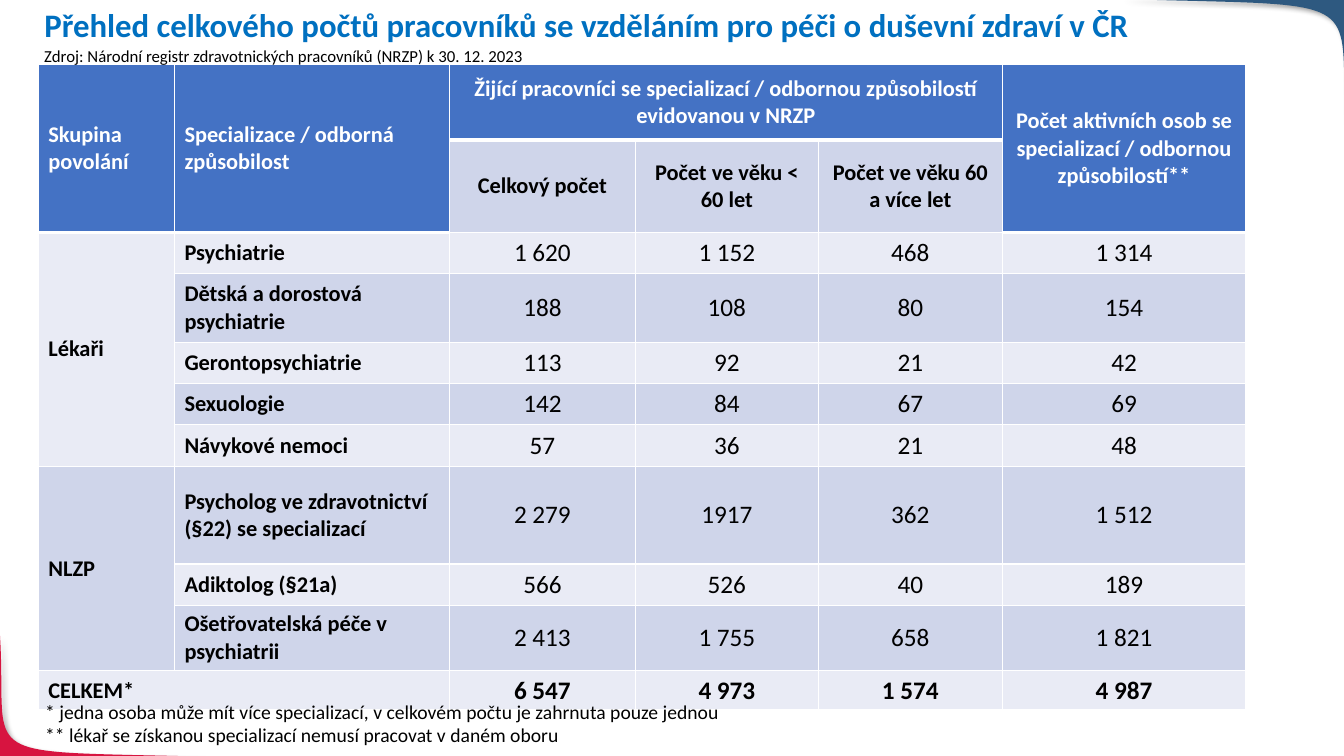
from dataclasses import dataclass

from lxml.etree import SubElement
from pptx import Presentation
from pptx.dml.color import RGBColor
from pptx.enum.text import MSO_ANCHOR, MSO_AUTO_SIZE, PP_ALIGN
from pptx.oxml.ns import qn
from pptx.util import Inches, Pt


@dataclass(frozen=True)
class Theme:
    font: str = "Calibri"
    title: str = "0070C0"
    text: str = "000000"
    white: str = "FFFFFF"
    header: str = "4472C4"
    light: str = "E9EBF5"
    dark: str = "CFD5EA"
    red: str = "D71440"
    blue: str = "2E5980"
    title_size: float = 23.4
    label_size: int = 16
    number_size: int = 18
    note_size: int = 14
    source_size: int = 12


T = Theme()
WIDTH, HEIGHT = 13.33, 7.5

TITLE = "Přehled celkového počtů pracovníků se vzděláním pro péči o duševní zdraví v ČR"
SOURCE = ["Zdroj: Národní registr zdravotnických pracovníků (NRZP) k 30. 12. 2023"]
NOTES = [
    "* jedna osoba může mít více specializací, v celkovém počtu je zahrnuta pouze jednou",
    "** lékař se získanou specializací nemusí pracovat v daném oboru",
]
ROWS = [
    ("Skupina povolání", "Specializace / odborná způsobilost",
     "Žijící pracovníci se specializací / odbornou způsobilostí evidovanou v NRZP", "", "",
     "Počet aktivních osob se specializací / odbornou způsobilostí**"),
    ("", "", "Celkový počet", "Počet ve věku < 60 let", "Počet ve věku 60 a více let", ""),
    ("Lékaři", "Psychiatrie", "1 620", "1 152", "468", "1 314"),
    ("", "Dětská a dorostová psychiatrie", "188", "108", "80", "154"),
    ("", "Gerontopsychiatrie", "113", "92", "21", "42"),
    ("", "Sexuologie", "142", "84", "67", "69"),
    ("", "Návykové nemoci", "57", "36", "21", "48"),
    ("NLZP", "Psycholog ve zdravotnictví (§22) se specializací", "2 279", "1917", "362", "1 512"),
    ("", "Adiktolog (§21a)", "566", "526", "40", "189"),
    ("", "Ošetřovatelská péče v psychiatrii", "2 413", "1 755", "658", "1 821"),
    ("CELKEM*", "", "6 547", "4 973", "1 574", "4 987"),
]
COLUMN_WIDTHS = [1.35, 2.73, 1.84, 1.82, 1.82, 2.42]
ROW_HEIGHTS = [0.75, 0.91, 0.41, 0.68, 0.41, 0.41, 0.41, 0.97, 0.41, 0.65, 0.39]
# first row, first column, last row, last column
MERGES = [(0, 0, 1, 0), (0, 1, 1, 1), (0, 2, 0, 4), (0, 5, 1, 5),
          (2, 0, 6, 0), (7, 0, 9, 0), (10, 0, 10, 1)]
FIRST_NUMBER_ROW, FIRST_NUMBER_COLUMN, TOTAL_ROW = 2, 2, len(ROWS) - 1

# four Bézier points of the curved edge, then the slide corner it encloses
CORNERS = [
    (T.red, [(2.13, 7.51), (-0.34, 7.44), (0.08, 7.59), (0, 6.3)], (-0.01, 7.51)),
    (T.blue, [(11.11, -0.01), (13.7, 0.07), (13.26, -0.1), (13.35, 1.42)], (13.35, -0.01)),
]


def rgb(value):
    return RGBColor.from_string(value)


def style(p, size, color, bold=False, align=PP_ALIGN.LEFT):
    p.alignment = align
    p.font.name, p.font.size, p.font.bold = T.font, Pt(size), bold
    p.font.color.rgb = rgb(color)


def bezier(points, steps=40):
    """Points along a cubic Bézier curve, in EMU."""
    for i in range(steps + 1):
        t = i / steps
        weights = ((1 - t) ** 3, 3 * t * (1 - t) ** 2, 3 * t * t * (1 - t), t ** 3)
        yield tuple(Inches(sum(w * p[axis] for w, p in zip(weights, points)))
                    for axis in (0, 1))


def add_corner(s, color, curve, corner):
    start, *rest = bezier(curve)
    builder = s.shapes.build_freeform(*start)
    builder.add_line_segments(rest + [tuple(map(Inches, corner))], close=True)
    sp = builder.convert_to_shape()
    sp.fill.solid()
    sp.fill.fore_color.rgb = rgb(color)
    sp.line.fill.background()
    effects = SubElement(sp.element.spPr, qn("a:effectLst"))
    shadow = SubElement(effects, qn("a:outerShdw"), blurRad=str(Pt(4)), dist=str(Pt(3)),
                        dir=str(45 * 60000), algn="tl", rotWithShape="0")
    black = SubElement(shadow, qn("a:srgbClr"), val=T.text)
    SubElement(black, qn("a:alpha"), val="40000")


def add_text(s, lines, box, size):
    tf = s.shapes.add_textbox(*map(Inches, box)).text_frame
    tf.word_wrap = True
    tf.text = "\n".join(lines)
    for p in tf.paragraphs:
        style(p, size, T.text)


def is_header(row, col):
    return row == 0 or (row == 1 and col in (0, 1, 5))


def add_borders(cell, row, col):
    """White cell lines, thick below every blue header cell."""
    top = 3 if row > 0 and is_header(row - 1, col) else 1
    bottom = 3 if is_header(row, col) else 1
    tcPr = cell._tc.get_or_add_tcPr()
    for side, width in (("L", 1), ("R", 1), ("T", top), ("B", bottom)):
        ln = SubElement(tcPr, qn(f"a:ln{side}"), w=str(Pt(width)))
        fill = SubElement(ln, qn("a:solidFill"))
        SubElement(fill, qn("a:srgbClr"), val=T.white)


def format_cell(cell, row, col, text):
    header = is_header(row, col)
    add_borders(cell, row, col)
    cell.fill.solid()
    cell.fill.fore_color.rgb = rgb(T.header if header else T.dark if row % 2 else T.light)
    cell.vertical_anchor = MSO_ANCHOR.MIDDLE
    centred = col >= FIRST_NUMBER_COLUMN
    number = centred and row >= FIRST_NUMBER_ROW
    if number and row == TOTAL_ROW:
        cell.margin_left = cell.margin_right = cell.margin_top = Inches(0.01)
        cell.margin_bottom = 0
    if text:
        cell.text = text
    style(cell.text_frame.paragraphs[0], T.number_size if number else T.label_size,
          T.white if header else T.text, not number or row == TOTAL_ROW,
          PP_ALIGN.CENTER if centred else PP_ALIGN.LEFT)


def add_staff_table(s, left, top):
    size = map(Inches, (left, top, sum(COLUMN_WIDTHS), sum(ROW_HEIGHTS)))
    table = s.shapes.add_table(len(ROWS), len(COLUMN_WIDTHS), *size).table
    for column, width in zip(table.columns, COLUMN_WIDTHS):
        column.width = Inches(width)
    for row, height in zip(table.rows, ROW_HEIGHTS):
        row.height = Inches(height)
    for r, texts in enumerate(ROWS):
        for c, text in enumerate(texts):
            format_cell(table.cell(r, c), r, c, text)
    for r1, c1, r2, c2 in MERGES:
        table.cell(r1, c1).merge(table.cell(r2, c2))


def add_title(s):
    title = s.shapes.title
    title.element.getparent().append(title.element)  # in front of the corners
    title.left, title.top, title.width, title.height = map(Inches, (0.34, 0.04, 12.01, 0.59))
    tf = title.text_frame
    tf.text = TITLE
    tf.word_wrap, tf.auto_size = True, MSO_AUTO_SIZE.NONE
    tf.vertical_anchor = MSO_ANCHOR.TOP
    p = tf.paragraphs[0]
    p.line_spacing = 0.9
    style(p, T.title_size, T.title, True)


def main():
    prs = Presentation()
    prs.slide_width, prs.slide_height = Inches(WIDTH), Inches(HEIGHT)
    s = prs.slides.add_slide(prs.slide_layouts[5])
    for corner in CORNERS:
        add_corner(s, *corner)
    add_title(s)
    add_staff_table(s, 0.38, 0.64)
    add_text(s, NOTES, (0.35, 6.89, 10.76, 0.57), T.note_size)
    add_text(s, SOURCE, (0.34, 0.4, 8.75, 0.3), T.source_size)
    prs.save("out.pptx")


if __name__ == "__main__":
    main()
